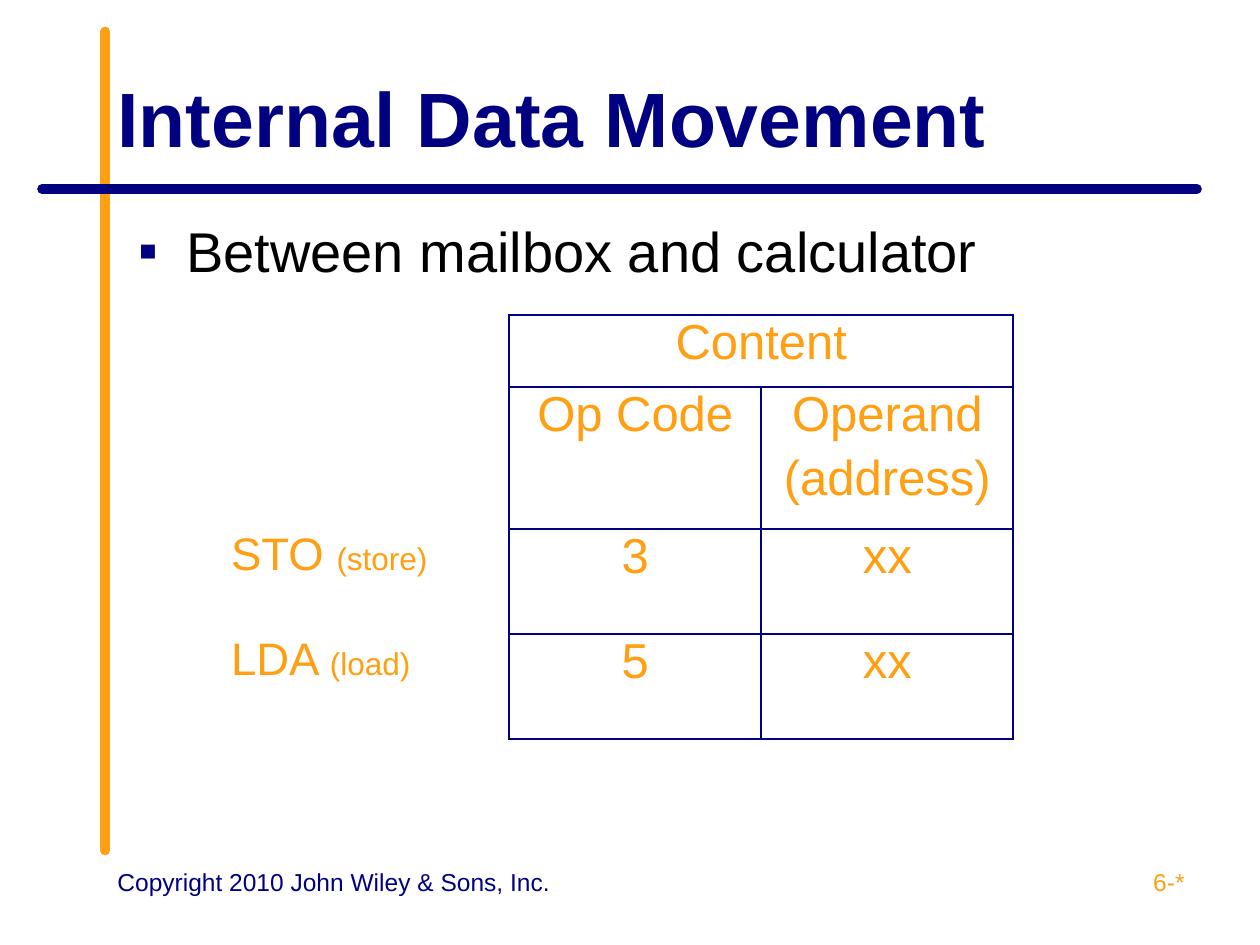
from dataclasses import dataclass
from typing import NamedTuple

from lxml import etree
from pptx import Presentation
from pptx.dml.color import RGBColor
from pptx.enum.shapes import MSO_CONNECTOR
from pptx.enum.text import MSO_ANCHOR, PP_ALIGN
from pptx.oxml.ns import qn
from pptx.util import Inches, Pt

LEFT, CENTER, RIGHT = PP_ALIGN.LEFT, PP_ALIGN.CENTER, PP_ALIGN.RIGHT
MIDDLE = MSO_ANCHOR.MIDDLE
STRAIGHT = MSO_CONNECTOR.STRAIGHT
TITLE_ONLY = 5

SLIDE_WIDTH, SLIDE_HEIGHT = Inches(10), Inches(7.5)
COLUMN, ROW = SLIDE_WIDTH / 12, SLIDE_HEIGHT / 30


@dataclass(frozen=True)
class Theme:
    font: str = "Arial"
    navy: str = "000080"
    orange: str = "FF9F11"
    black: str = "000000"
    white: str = "FFFFFF"
    title: float = 44
    body: float = 32
    cell: float = 28
    mnemonic: float = 26
    hint: float = 18
    footer: float = 14
    rule: float = 5.5
    border: float = 1.5
    hidden_border: float = 1


THEME = Theme()


class Box(NamedTuple):
    """Left, top, width and height in grid columns and rows."""
    left: float
    top: float
    width: float
    height: float


class Rule(NamedTuple):
    """A thick line between two grid points."""
    start: tuple[float, float]
    end: tuple[float, float]
    color: str


class Run(NamedTuple):
    text: str
    size: float


class Footer(NamedTuple):
    text: str
    box: Box
    color: str
    align: PP_ALIGN


RULES = [
    Rule((1, 27), (1, 1), THEME.orange),
    Rule((11.4, 6), (0.4, 6), THEME.navy),
]
FOOTERS = [
    Footer("Copyright 2010 John Wiley & Sons, Inc.", Box(1, 27.33, 4.4, 2.08), THEME.navy, LEFT),
    Footer("6-*", Box(8.6, 27.33, 2.8, 2.08), THEME.orange, RIGHT),
]
TITLE_BOX = Box(1, 1.2, 10.4, 5)
BODY_BOX = Box(1.2, 6.67, 10.2, 3.12)

TABLE_ORIGIN = (2.2, 10)
TABLE_COLUMNS = [2.1, 0.55, 2.4, 2.4]
TABLE_ROWS = [2.28, 4.52, 3.33, 3.33]
LABEL_COLUMN, GAP_COLUMN, CODE_COLUMN, OPERAND_COLUMN = range(4)
CELLS = {
    (0, CODE_COLUMN): "Content",
    (1, CODE_COLUMN): "Op Code",
    (1, OPERAND_COLUMN): "Operand\n(address)",
    (2, CODE_COLUMN): "3",
    (2, OPERAND_COLUMN): "xx",
    (3, CODE_COLUMN): "5",
    (3, OPERAND_COLUMN): "xx",
}
MNEMONICS = {2: ("STO ", "(store)"), 3: ("LDA ", "(load)")}


def across(columns: float) -> int:
    return round(columns * COLUMN)


def down(rows: float) -> int:
    return round(rows * ROW)


def place(box: Box) -> tuple[int, int, int, int]:
    return across(box.left), down(box.top), across(box.width), down(box.height)


def write(frame, text: str | list[Run], *, size: float = THEME.cell, color: str = THEME.orange,
          align: PP_ALIGN = LEFT, bold: bool = False, space_before: float = 0,
          bullet: str = "") -> None:
    """Fill a text frame; a list of runs makes one paragraph of mixed sizes."""
    lines = [[Run(line, size)] for line in text.split("\n")] if isinstance(text, str) else [text]
    for index, runs in enumerate(lines):
        paragraph = frame.add_paragraph() if index else frame.paragraphs[0]
        paragraph.alignment = align
        paragraph.space_before = Pt(space_before if index else 0)
        if bullet:
            add_bullet(paragraph, bullet)
        for item in runs:
            run = paragraph.add_run()
            run.text = item.text
            run.font.name = THEME.font
            run.font.size = Pt(item.size)
            run.font.bold = bold
            run.font.color.rgb = RGBColor.from_string(color)


def add_bullet(paragraph, character: str) -> None:
    properties = paragraph._p.get_or_add_pPr()
    properties.set("marL", str(Inches(0.38)))
    properties.set("indent", str(-Inches(0.38)))
    color = etree.SubElement(properties, qn("a:buClr"))
    etree.SubElement(color, qn("a:srgbClr"), val=THEME.navy)
    etree.SubElement(properties, qn("a:buFont"), typeface=THEME.font)
    etree.SubElement(properties, qn("a:buChar"), char=character)


def add_text_box(slide, box: Box, text: str, **text_format) -> None:
    frame = slide.shapes.add_textbox(*place(box)).text_frame
    frame.word_wrap = True
    write(frame, text, **text_format)


def add_rule(slide, rule: Rule) -> None:
    (x1, y1), (x2, y2) = rule.start, rule.end
    connector = slide.shapes.add_connector(STRAIGHT, across(x1), down(y1), across(x2), down(y2))
    connector.line.color.rgb = RGBColor.from_string(rule.color)
    connector.line.width = Pt(THEME.rule)
    connector.line._get_or_add_ln().set("cap", "rnd")
    etree.SubElement(connector._element.spPr, qn("a:effectLst"))


def set_borders(cell, column: int) -> None:
    """Draw navy edges around the content columns and white ones elsewhere."""
    properties = cell._tc.get_or_add_tcPr()
    for side in "LRTB":
        visible = column >= CODE_COLUMN or (column == GAP_COLUMN and side == "R")
        color = THEME.navy if visible else THEME.white
        width = THEME.border if visible else THEME.hidden_border
        line = etree.SubElement(properties, qn(f"a:ln{side}"), w=str(Pt(width)))
        fill = etree.SubElement(line, qn("a:solidFill"))
        etree.SubElement(fill, qn("a:srgbClr"), val=color)


def add_instruction_table(slide) -> None:
    box = Box(*TABLE_ORIGIN, sum(TABLE_COLUMNS), sum(TABLE_ROWS))
    table = slide.shapes.add_table(len(TABLE_ROWS), len(TABLE_COLUMNS), *place(box)).table
    table.first_row = table.horz_banding = False
    for column, width in zip(table.columns, TABLE_COLUMNS):
        column.width = across(width)
    for row_index, height in enumerate(TABLE_ROWS):
        table.rows[row_index].height = down(height)
        for column_index in range(len(TABLE_COLUMNS)):
            cell = table.cell(row_index, column_index)
            cell.margin_left = cell.margin_right = cell.margin_top = cell.margin_bottom = 0
            set_borders(cell, column_index)
            cell.fill.background()
    table.cell(0, CODE_COLUMN).merge(table.cell(0, OPERAND_COLUMN))
    for position, text in CELLS.items():
        write(table.cell(*position).text_frame, text, align=CENTER, space_before=5.6)
    for row_index, (name, hint) in MNEMONICS.items():
        runs = [Run(name, THEME.mnemonic), Run(hint, THEME.hint)]
        write(table.cell(row_index, LABEL_COLUMN).text_frame, runs)


def main() -> None:
    presentation = Presentation()
    presentation.slide_width, presentation.slide_height = SLIDE_WIDTH, SLIDE_HEIGHT
    slide = presentation.slides.add_slide(presentation.slide_layouts[TITLE_ONLY])
    for rule in RULES:
        add_rule(slide, rule)
    for footer in FOOTERS:
        add_text_box(slide, footer.box, footer.text, size=THEME.footer, color=footer.color,
                     align=footer.align)
    title = slide.shapes.title
    title.left, title.top, title.width, title.height = place(TITLE_BOX)
    title.text_frame.vertical_anchor = MIDDLE
    write(title.text_frame, "Internal Data Movement", size=THEME.title, color=THEME.navy, bold=True)
    add_text_box(slide, BODY_BOX, "Between mailbox and calculator", size=THEME.body,
                 color=THEME.black, bullet="▪")
    add_instruction_table(slide)
    presentation.save("out.pptx")


if __name__ == "__main__":
    main()
